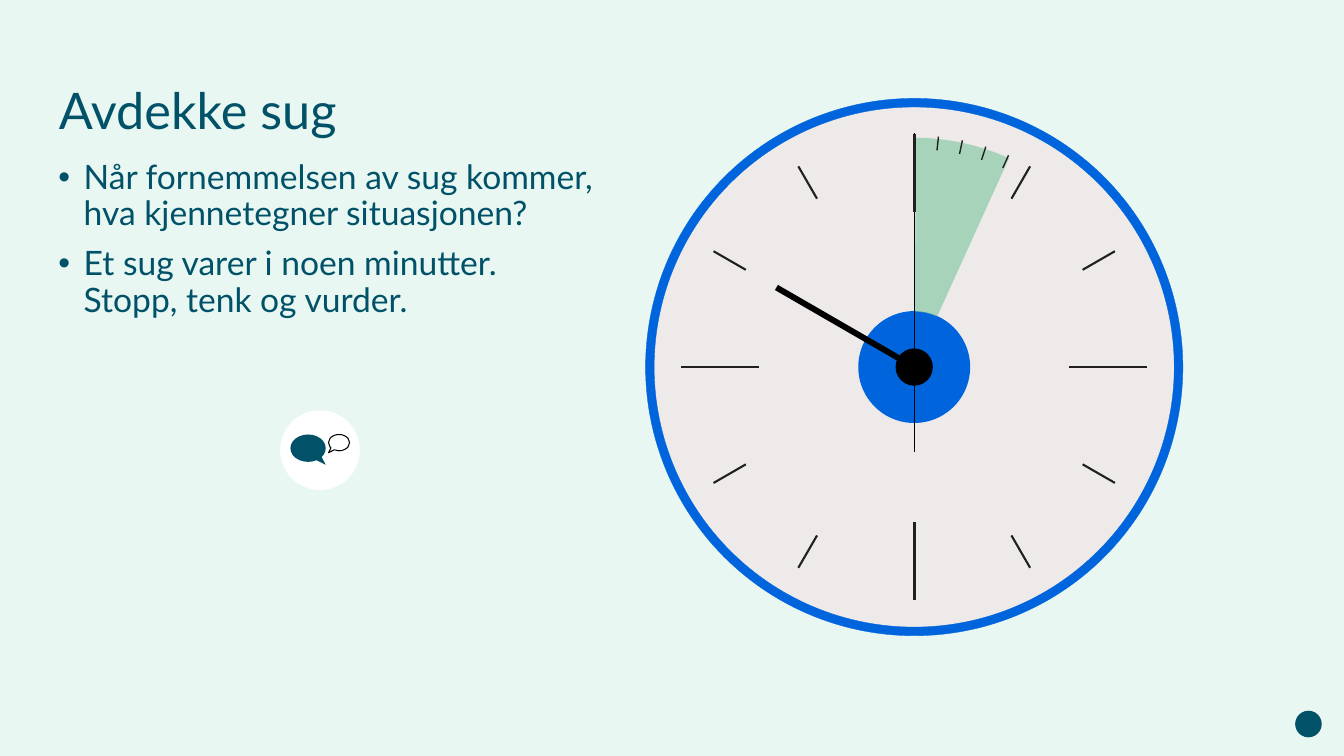
from dataclasses import dataclass
from math import cos, radians, sin
from typing import Optional

from lxml.etree import SubElement
from pptx import Presentation
from pptx.dml.color import RGBColor
from pptx.enum.shapes import MSO_CONNECTOR, MSO_SHAPE
from pptx.enum.text import MSO_ANCHOR, MSO_AUTO_SIZE, PP_ALIGN
from pptx.oxml.ns import qn
from pptx.util import Cm, Pt

MINT = RGBColor(0xE8, 0xF7, 0xF2)
PETROL = RGBColor(0x01, 0x51, 0x68)
BLUE = RGBColor(0x00, 0x65, 0xDD)
GREEN = RGBColor(0x76, 0xC4, 0x99)
DIAL_GREY = RGBColor(0xDB, 0xD2, 0xD2)
PALE_GREY = RGBColor(0xEE, 0xEA, 0xEA)
TICK_GREY = RGBColor(0x20, 0x20, 0x20)
BLACK = RGBColor(0x00, 0x00, 0x00)
WHITE = RGBColor(0xFF, 0xFF, 0xFF)

FONT = "Lato"
CLOCK_X, CLOCK_Y = 23.04, 9.25  # cm


@dataclass
class Figure:
    """A preset shape; lengths in cm, line width in points."""
    preset: MSO_SHAPE
    left: float
    top: float
    width: float
    height: float
    fill: Optional[RGBColor] = None
    opacity: int = 100
    line: Optional[RGBColor] = None
    line_width: float = 0
    adjustments: tuple = ()
    rotation: float = 0


@dataclass
class RadialLine:
    """A line along a clock angle, between two distances (cm) from the centre."""
    angle: float
    start: float
    end: float
    width: float
    color: RGBColor = TICK_GREY


def clock_figure(preset: MSO_SHAPE, diameter: float, fill: RGBColor, **options) -> Figure:
    """A figure centred on the clock."""
    return Figure(preset, CLOCK_X - diameter / 2, CLOCK_Y - diameter / 2,
                  diameter, diameter, fill, **options)


def draw_figure(slide, figure: Figure) -> None:
    shape = slide.shapes.add_shape(figure.preset, Cm(figure.left), Cm(figure.top),
                                   Cm(figure.width), Cm(figure.height))
    shape.shadow.inherit = False
    shape.rotation = figure.rotation
    for index, value in enumerate(figure.adjustments):
        shape.adjustments[index] = value
    if figure.fill is None:
        shape.fill.background()
    else:
        shape.fill.solid()
        shape.fill.fore_color.rgb = figure.fill
        if figure.opacity < 100:
            color = shape.fill._xPr.find(qn("a:solidFill"))[0]
            SubElement(color, qn("a:alpha"), val=str(figure.opacity * 1000))
    if figure.line is None:
        shape.line.fill.background()
    else:
        shape.line.color.rgb = figure.line
        shape.line.width = Pt(figure.line_width)


def draw_radial_line(slide, line: RadialLine) -> None:
    across, down = sin(radians(line.angle)), -cos(radians(line.angle))
    connector = slide.shapes.add_connector(
        MSO_CONNECTOR.STRAIGHT,
        Cm(CLOCK_X + line.start * across), Cm(CLOCK_Y + line.start * down),
        Cm(CLOCK_X + line.end * across), Cm(CLOCK_Y + line.end * down))
    connector.line.color.rgb = line.color
    connector.line.width = Pt(line.width)
    SubElement(connector._element.spPr, qn("a:effectLst"))


def place(shape, left: float, top: float, width: float, height: float) -> None:
    shape.left, shape.top = Cm(left), Cm(top)
    shape.width, shape.height = Cm(width), Cm(height)
    shape.text_frame.word_wrap = True
    shape.text_frame.auto_size = MSO_AUTO_SIZE.NONE


def format_paragraph(paragraph, size: float) -> None:
    paragraph.alignment = PP_ALIGN.LEFT
    paragraph.line_spacing = 0.9
    for run in paragraph.runs:
        run.font.name = FONT
        run.font.size = Pt(size)
        run.font.color.rgb = PETROL


def write_title(title, text: str) -> None:
    place(title, 1.23, 1.02, 30.2, 3.68)
    title.text_frame.vertical_anchor = MSO_ANCHOR.MIDDLE
    title.text_frame.text = text
    format_paragraph(title.text_frame.paragraphs[0], 36)


def write_bullets(body, texts: list[str]) -> None:
    place(body, 1.47, 4.04, 14.58, 12.09)
    frame = body.text_frame
    frame.margin_left = frame.margin_right = frame.margin_top = frame.margin_bottom = 0
    frame.vertical_anchor = MSO_ANCHOR.TOP
    for index, text in enumerate(texts):
        paragraph = frame.add_paragraph() if index else frame.paragraphs[0]
        paragraph.text = text
        paragraph.space_before = Pt(10 if index else 0)
        format_paragraph(paragraph, 24)
        properties = paragraph._p.get_or_add_pPr()
        properties.set("marL", str(Cm(0.64)))
        properties.set("indent", str(-Cm(0.64)))
        SubElement(properties, qn("a:buFont"), typeface="Arial")
        SubElement(properties, qn("a:buChar"), char="•")


def draw_clock(slide) -> None:
    dial = [
        clock_figure(MSO_SHAPE.OVAL, 13.36, DIAL_GREY),
        clock_figure(MSO_SHAPE.OVAL, 13.31, WHITE, opacity=54),
        clock_figure(MSO_SHAPE.DONUT, 13.54, BLUE, line=BLUE, line_width=0.25,
                     adjustments=(0.016,)),
        clock_figure(MSO_SHAPE.OVAL, 2.82, BLUE),
        clock_figure(MSO_SHAPE.OVAL, 0.94, BLACK),
        clock_figure(MSO_SHAPE.BLOCK_ARC, 11.56, GREEN, opacity=59, rotation=270,
                     adjustments=(0.301, 14.644, 0.379)),
    ]
    for figure in dial:
        draw_figure(slide, figure)

    hands = [
        RadialLine(300, 0, 4.01, 4.25, BLACK),
        RadialLine(0, 5.89, -2.13, 1, BLACK),
        RadialLine(180, 2.69, 5.89, 1.5, PALE_GREY),
    ]
    hour_ticks = [RadialLine(angle, 4.9, 5.84, 1.5) if angle % 90
                  else RadialLine(angle, 3.91, 5.87, 2)
                  for angle in range(0, 360, 30)]
    minute_ticks = [RadialLine(angle, 5.49, 5.84, 1) for angle in range(6, 30, 6)]
    for line in hands + hour_ticks + minute_ticks:
        draw_radial_line(slide, line)


def draw_dialogue_icon(slide) -> None:
    bubble = MSO_SHAPE.OVAL_CALLOUT
    for figure in [
        Figure(MSO_SHAPE.OVAL, 7.06, 10.34, 2.01, 2.01, WHITE),
        Figure(bubble, 7.32, 10.95, 0.89, 0.69, PETROL, adjustments=(0.5, 0.61)),
        Figure(bubble, 8.28, 10.95, 0.53, 0.41, line=BLACK, line_width=0.75,
               adjustments=(-0.5, 0.62)),
    ]:
        draw_figure(slide, figure)


def main() -> None:
    presentation = Presentation()
    presentation.slide_width, presentation.slide_height = Cm(33.87), Cm(19.05)
    slide = presentation.slides.add_slide(presentation.slide_layouts[1])
    slide.background.fill.solid()
    slide.background.fill.fore_color.rgb = MINT

    corner_mark = Figure(MSO_SHAPE.OVAL, 32.64, 17.91, 0.67, 0.67, PETROL)
    draw_figure(slide, corner_mark)
    write_title(slide.shapes.title, "Avdekke sug")
    write_bullets(slide.placeholders[1], [
        "Når fornemmelsen av sug kommer, hva kjennetegner situasjonen?",
        "Et sug varer i noen minutter. \vStopp, tenk og vurder.",
    ])
    draw_clock(slide)
    draw_dialogue_icon(slide)
    presentation.save("out.pptx")


if __name__ == "__main__":
    main()
